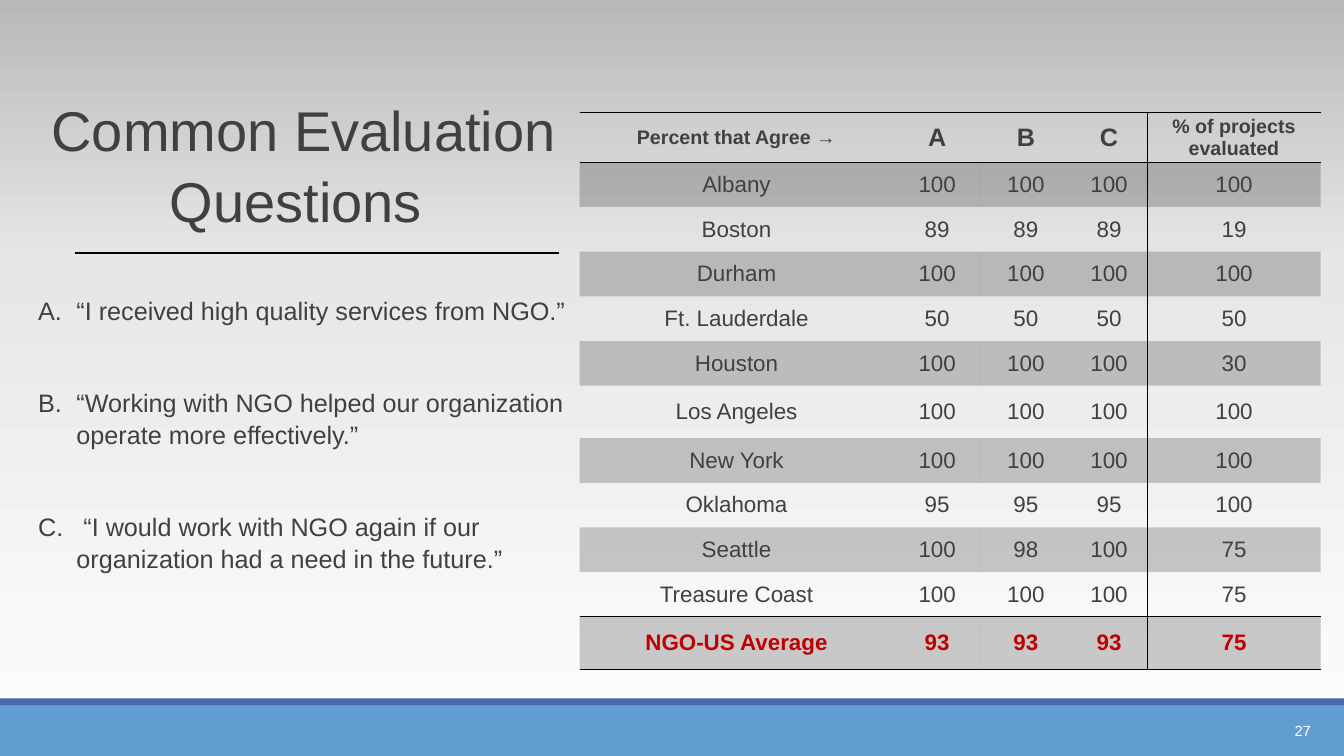
"""Build the evaluation questions slide with its table of results by city."""
from copy import deepcopy

from pptx import Presentation
from pptx.dml.color import RGBColor
from pptx.enum.shapes import MSO_CONNECTOR, MSO_SHAPE
from pptx.enum.text import MSO_ANCHOR, PP_ALIGN
from pptx.oxml.ns import qn
from pptx.oxml.xmlchemy import OxmlElement
from pptx.util import Inches, Pt

BLACK = RGBColor(0x00, 0x00, 0x00)
WHITE = RGBColor(0xFF, 0xFF, 0xFF)
GRAY = RGBColor(0x40, 0x40, 0x40)
RED = RGBColor(0xC0, 0x00, 0x00)
BLUE = RGBColor(0x62, 0x9D, 0xD1)
DARK_BLUE = RGBColor(0x4A, 0x66, 0xAC)
BACKGROUND = [(0, RGBColor(0xFE, 0xFE, 0xFE)), (0.65, RGBColor(0xE7, 0xE7, 0xE7)),
              (1, RGBColor(0xB9, 0xB9, 0xB9))]

QUESTIONS = [
    "“I received high quality services from NGO.”",
    "“Working with NGO helped our organization operate more effectively.”",
    " “I would work with NGO again if our organization had a need in the future.”",
]
RESULTS = [
    ("Percent that Agree →", "A", "B", "C", "% of projects evaluated"),
    ("Albany", 100, 100, 100, 100),
    ("Boston", 89, 89, 89, 19),
    ("Durham", 100, 100, 100, 100),
    ("Ft. Lauderdale", 50, 50, 50, 50),
    ("Houston", 100, 100, 100, 30),
    ("Los Angeles", 100, 100, 100, 100),
    ("New York", 100, 100, 100, 100),
    ("Oklahoma", 95, 95, 95, 100),
    ("Seattle", 100, 98, 100, 75),
    ("Treasure Coast", 100, 100, 100, 75),
    ("NGO-US Average", 93, 93, 93, 75),
]
COL_WIDTHS = [3.11, 0.87, 0.89, 0.76, 1.72]
TABLE_HEIGHT = 5.52
TALL_ROWS = {0: 0.49, 6: 0.52, 11: 0.52}


def write(p, text, size, color=GRAY, bold=False, align=PP_ALIGN.CENTER):
    p.alignment = align
    r = p.add_run()
    r.text = text
    r.font.name = "Arial"
    r.font.size = Pt(size)
    r.font.bold = bold
    r.font.color.rgb = color


def add_border(cell, side):
    ln = OxmlElement(f"a:ln{side}")
    ln.set("w", str(Pt(1)))
    fill = OxmlElement("a:solidFill")
    clr = OxmlElement("a:srgbClr")
    clr.set("val", str(BLACK))
    fill.append(clr)
    ln.append(fill)
    cell._tc.get_or_add_tcPr().append(ln)


prs = Presentation()
prs.slide_width = Inches(13.33)
prs.slide_height = Inches(7.5)
s = prs.slides.add_slide(prs.slide_layouts[6])

bg = s.background.fill
bg.gradient()
bg.gradient_angle = 90
gs_list = s._element.find(".//" + qn("a:gsLst"))
gs_list.append(deepcopy(gs_list[-1]))
for stop, (position, color) in zip(bg.gradient_stops, BACKGROUND):
    stop.position = position
    stop.color.rgb = color

for top, height, color in [(7, 0.5, BLUE), (6.93, 0.07, DARK_BLUE)]:
    sp = s.shapes.add_shape(MSO_SHAPE.RECTANGLE, 0, Inches(top), prs.slide_width, Inches(height))
    sp.shadow.inherit = False
    sp.fill.solid()
    sp.fill.fore_color.rgb = color
    sp.line.fill.background()

number = s.shapes.add_textbox(Inches(11.67), Inches(7.05), Inches(1.43), Inches(0.4))
tf = number.text_frame
tf.word_wrap = True
tf.vertical_anchor = MSO_ANCHOR.MIDDLE
write(tf.paragraphs[0], "27", 10.5, color=WHITE, align=PP_ALIGN.RIGHT)

questions = s.shapes.add_textbox(Inches(0.28), Inches(0.87), Inches(5.46), Inches(5.08))
tf = questions.text_frame
tf.word_wrap = True
title = tf.paragraphs[0]
title.line_spacing = 1.05
write(title, "Common Evaluation Questions ", 40)
for question in QUESTIONS:
    p = tf.add_paragraph()
    p.line_spacing = 1.05
    p.space_before = Pt(43)
    write(p, question, 18, align=PP_ALIGN.LEFT)
    pPr = p._p.get_or_add_pPr()
    pPr.set("marL", str(Inches(0.38)))
    pPr.set("indent", str(-Inches(0.38)))
    bullet = OxmlElement("a:buAutoNum")
    bullet.set("type", "alphaUcPeriod")
    pPr.append(bullet)

last_row = len(RESULTS) - 1
row_height = (TABLE_HEIGHT - sum(TALL_ROWS.values())) / (len(RESULTS) - len(TALL_ROWS))
frame = s.shapes.add_table(len(RESULTS), len(COL_WIDTHS), Inches(5.75), Inches(1.12),
                           Inches(sum(COL_WIDTHS)), Inches(TABLE_HEIGHT))
table = frame.table
table.first_row = False
table.horz_banding = False
style = table._tbl.tblPr.find(qn("a:tableStyleId"))
style.text = "{2D5ABB26-0587-4C30-8999-92F81FD0307C}"
for col, width in zip(table.columns, COL_WIDTHS):
    col.width = Inches(width)

for i, values in enumerate(RESULTS):
    table.rows[i].height = Inches(TALL_ROWS.get(i, row_height))
    for j, value in enumerate(values):
        cell = table.cell(i, j)
        cell.vertical_anchor = MSO_ANCHOR.MIDDLE
        cell.margin_left = cell.margin_right = cell.margin_top = cell.margin_bottom = 0
        if i == 0:
            size = 18 if j in (1, 2, 3) else 14
        else:
            size = 16
        write(cell.text_frame.paragraphs[0], str(value), size,
              color=RED if i == last_row else GRAY, bold=i in (0, last_row))
        borders = {"L": j == 4, "R": j == 3, "T": i in (0, last_row),
                   "B": i in (0, last_row - 1, last_row)}
        for side, shown in borders.items():
            if shown:
                add_border(cell, side)
        if i % 2:
            cell.fill.solid()
            cell.fill.fore_color.rgb = BLACK
            alpha = OxmlElement("a:alpha")
            alpha.set("val", "20000")
            cell._tc.tcPr.find(qn("a:solidFill")).find(qn("a:srgbClr")).append(alpha)
        else:
            cell.fill.background()

rule = s.shapes.add_connector(MSO_CONNECTOR.STRAIGHT, Inches(0.74), Inches(2.51),
                              Inches(5.54), Inches(2.51))
rule.line.color.rgb = BLACK
rule.line.width = Pt(1)
rule._element.spPr.append(OxmlElement("a:effectLst"))

prs.save("out.pptx")
